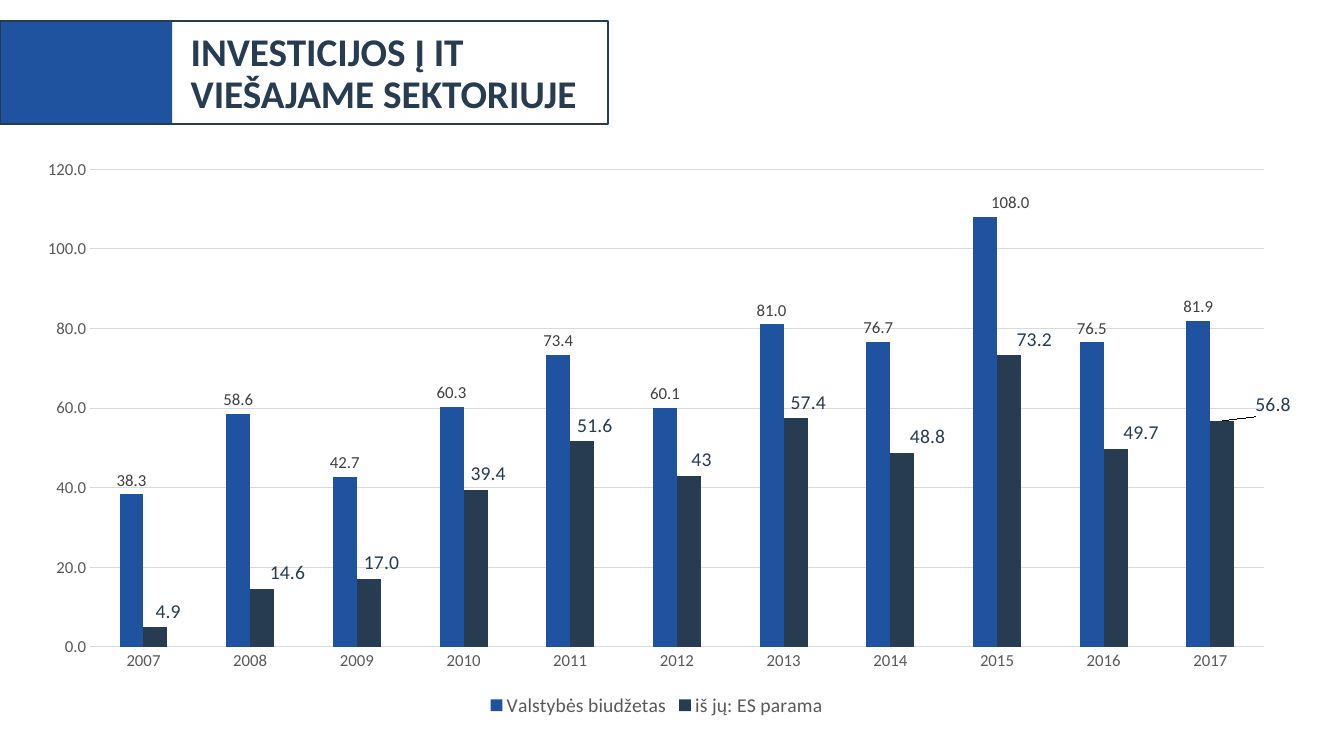
from lxml.etree import SubElement
from pptx import Presentation
from pptx.chart.data import CategoryChartData
from pptx.dml.color import RGBColor
from pptx.enum.chart import XL_CHART_TYPE, XL_LABEL_POSITION, XL_LEGEND_POSITION, XL_TICK_MARK
from pptx.enum.shapes import MSO_SHAPE
from pptx.enum.text import MSO_ANCHOR, MSO_AUTO_SIZE, PP_ALIGN
from pptx.oxml.ns import qn
from pptx.util import Cm, Pt

COLORS = {"blue": "1F529F", "navy": "273B51", "axis": "595959",
          "label": "404040", "grid": "D9D9D9"}
FONT = "Calibri"
YEARS = [str(year) for year in range(2007, 2018)]
BUDGET = [38.3, 58.6, 42.7, 60.3, 73.4, 60.1, 81.0, 76.7, 108.0, 76.5, 81.9]
EU_SUPPORT = [4.9, 14.6, 17.0, 39.4, 51.6, 43, 57.4, 48.8, 73.2, 49.7, 56.8]
# Sideways label shifts, as shares of the chart width, by point number
BUDGET_SHIFTS = {8: 0.02}
EU_SHIFTS = dict(enumerate([0.01, 0.02, 0.01, 0.01, 0.01, 0.01,
                            0.01, 0.02, 0.02, 0.02, 0.04]))
WHOLE_NUMBER_POINT = 5


def rgb(name):
    return RGBColor.from_string(COLORS[name])


def style_font(font, size, color, bold=False):
    font.name = FONT
    font.size = Pt(size)
    font.bold = bold
    font.color.rgb = rgb(color)


def add_heading(page, left, top, width, height):
    accent_width = Cm(4.34)
    accent = page.shapes.add_shape(MSO_SHAPE.RECTANGLE, left, top, accent_width, height)
    accent.fill.solid()
    accent.fill.fore_color.rgb = rgb("blue")
    accent.line.fill.background()
    frame = page.shapes.add_shape(MSO_SHAPE.RECTANGLE, left, top, width, height)
    frame.fill.background()
    frame.line.color.rgb = rgb("navy")
    frame.line.width = Pt(1.25)
    for box in (accent, frame):
        box.shadow.inherit = False

    title = page.shapes.title
    title.left, title.top = left + Cm(4.55), top - Cm(0.48)
    title.width, title.height = Cm(14.55), height + Cm(1.09)
    text = title.text_frame
    text.text = "INVESTICIJOS Į IT \vVIEŠAJAME SEKTORIUJE"
    text.word_wrap = True
    text.auto_size = MSO_AUTO_SIZE.NONE
    text.vertical_anchor = MSO_ANCHOR.MIDDLE
    para = text.paragraphs[0]
    para.alignment = PP_ALIGN.LEFT
    para.line_spacing = 0.9
    for span in para.runs:
        style_font(span.font, 28, "navy", bold=True)


def add_manual_layout(parent, position, **settings):
    layout = SubElement(parent, qn("c:layout"))
    parent.insert(position, layout)
    manual = SubElement(layout, qn("c:manualLayout"))
    for tag, value in settings.items():
        SubElement(manual, qn(f"c:{tag}")).set("val", str(value))


def style_series(series, color, label_size, label_color, shifts):
    series.format.fill.solid()
    series.format.fill.fore_color.rgb = rgb(color)
    labels = series.data_labels
    labels.show_value = True
    labels.number_format = "0.0"
    labels.number_format_is_linked = False
    labels.position = XL_LABEL_POSITION.OUTSIDE_END
    style_font(labels.font, label_size, label_color)
    for number in shifts:
        label = series.points[number].data_label
        style_font(label.font, label_size, label_color)
        label.position = XL_LABEL_POSITION.OUTSIDE_END
    for element in series.data_labels._element.findall(qn("c:dLbl")):
        number = int(element.find(qn("c:idx")).get("val"))
        add_manual_layout(element, 1, x=shifts[number], y=0)


def style_axes(chart):
    for axis in (chart.category_axis, chart.value_axis):
        axis.major_tick_mark = XL_TICK_MARK.NONE
        axis.minor_tick_mark = XL_TICK_MARK.NONE
        axis.format.line.fill.background()
        style_font(axis.tick_labels.font, 12, "axis")
    values = chart.value_axis
    values.minimum_scale, values.maximum_scale, values.major_unit = 0, 120, 20
    values.tick_labels.number_format = "0.0"
    values.tick_labels.number_format_is_linked = False
    values.major_gridlines.format.line.color.rgb = rgb("grid")
    values.major_gridlines.format.line.width = Pt(0.75)


def add_investment_chart(page, left, top, width, height):
    data = CategoryChartData(number_format="0.0")
    data.categories = YEARS
    data.add_series("Valstybės biudžetas", BUDGET)
    data.add_series("iš jų: ES parama", EU_SUPPORT)
    chart = page.shapes.add_chart(XL_CHART_TYPE.COLUMN_CLUSTERED,
                                  left, top, width, height, data).chart
    chart.has_title = False
    chart.font.name = FONT
    chart.font.size = Pt(10)
    chart.has_legend = True
    chart.legend.position = XL_LEGEND_POSITION.BOTTOM
    chart.legend.include_in_layout = False
    style_font(chart.legend.font, 14, "axis")
    style_axes(chart)

    plot = chart.plots[0]
    plot.gap_width = 245
    plot.overlap = 0
    plot.vary_by_categories = False
    budget, support = plot.series
    style_series(budget, "blue", 12, "label", BUDGET_SHIFTS)
    style_series(support, "navy", 14, "navy", EU_SHIFTS)
    whole = support.points[WHOLE_NUMBER_POINT].data_label.text_frame
    whole.text = "43"
    style_font(whole.paragraphs[0].runs[0].font, 14, "navy")

    plot_area = chart._chartSpace.find(f".//{qn('c:plotArea')}")
    for layout in plot_area.findall(qn("c:layout")):
        plot_area.remove(layout)
    add_manual_layout(plot_area, 0, layoutTarget="inner", xMode="edge", yMode="edge",
                      x=0.053, y=0.037, w=0.926, h=0.833)


def main():
    deck = Presentation()
    deck.slide_width, deck.slide_height = Cm(33.87), Cm(19.05)
    page = deck.slides.add_slide(deck.slide_layouts[5])
    add_heading(page, Cm(0), Cm(0.53), Cm(15.32), Cm(2.59))
    add_investment_chart(page, Cm(0.58), Cm(3.73), Cm(31.95), Cm(14.45))
    deck.save("out.pptx")


if __name__ == "__main__":
    main()
